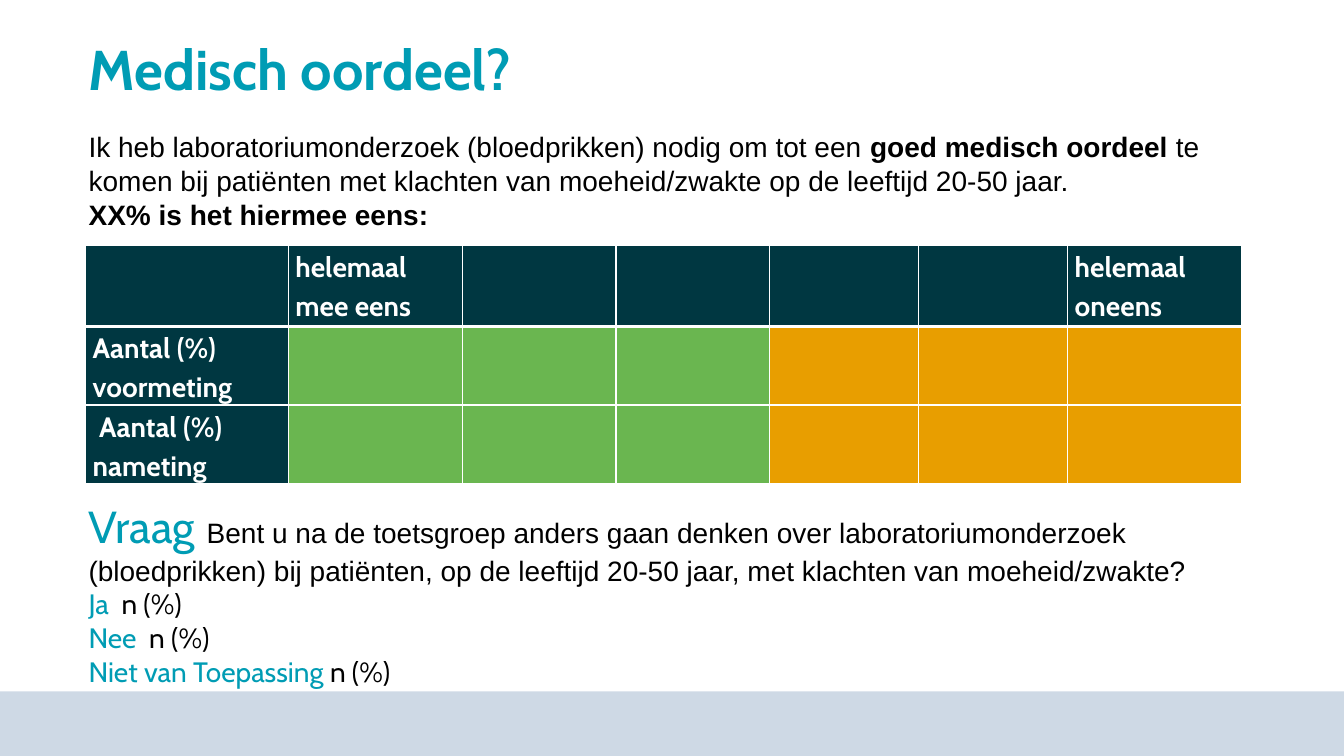
from dataclasses import dataclass

from lxml.etree import SubElement
from pptx import Presentation
from pptx.dml.color import RGBColor as Rgb
from pptx.enum.shapes import MSO_SHAPE as Preset
from pptx.enum.text import MSO_ANCHOR as Anchor, PP_ALIGN as Align
from pptx.oxml.ns import qn
from pptx.util import Inches, Pt


@dataclass(frozen=True)
class Theme:
    teal: str = "009CB4"
    navy: str = "003741"
    agree: str = "6AB650"
    disagree: str = "E89E00"
    band: str = "CED9E5"
    white: str = "FFFFFF"
    black: str = "000000"
    display: str = "Cabin"
    body: str = "Arial"
    title_size: int = 40
    lead_size: int = 32
    gap_size: int = 36
    text_size: int = 20


@dataclass
class SlideBuilder:
    theme: Theme
    slide: object

    def style(self, run, color, face, size=None, bold=False):
        font = run.font
        font.name = face
        font.size = Pt(size or self.theme.text_size)
        font.bold = bold
        font.color.rgb = Rgb.from_string(color)

    def place(self, left, top, width, height):
        return [Inches(length) for length in (left, top, width, height)]

    def title(self, text, box):
        heading = self.slide.shapes.title
        heading.left, heading.top, heading.width, heading.height = self.place(*box)
        frame = heading.text_frame
        frame.text = text
        frame.vertical_anchor = Anchor.MIDDLE
        line = frame.paragraphs[0]
        line.alignment = Align.LEFT
        line.line_spacing = 0.9
        self.style(line.runs[0], self.theme.teal, self.theme.display,
                   self.theme.title_size, True)

    def band(self, box):
        footer = self.slide.shapes.add_shape(Preset.RECTANGLE, *self.place(*box))
        footer.shadow.inherit = False
        footer.fill.solid()
        footer.fill.fore_color.rgb = Rgb.from_string(self.theme.band)
        footer.line.fill.background()

    def text(self, paragraphs, box):
        frame = self.slide.shapes.add_textbox(*self.place(*box)).text_frame
        frame.word_wrap = True
        for index, pieces in enumerate(paragraphs):
            line = frame.add_paragraph() if index else frame.paragraphs[0]
            for words, *look in pieces:
                run = line.add_run()
                run.text = words
                self.style(run, *look)

    def border(self, cell, widths):
        properties = cell._tc.get_or_add_tcPr()
        for side, width in zip("LRTB", widths):
            edge = SubElement(properties, qn(f"a:ln{side}"), w=str(Pt(width)))
            fill = SubElement(edge, qn("a:solidFill"))
            SubElement(fill, qn("a:srgbClr"), val=self.theme.white)

    def cell(self, cell, text, fill, widths):
        self.border(cell, widths)
        cell.fill.solid()
        cell.fill.fore_color.rgb = Rgb.from_string(fill)
        if text:
            cell.margin_left = cell.margin_right = Inches(0.07)
            cell.margin_top = cell.margin_bottom = 0
            cell.text = text
            line = cell.text_frame.paragraphs[0]
            line.line_spacing = 1.15
            self.style(line.runs[0], self.theme.white, self.theme.display, bold=True)

    def table(self, rows, fills, left, top, widths, heights):
        box = self.place(left, top, sum(widths), sum(heights))
        grid = self.slide.shapes.add_table(len(rows), len(widths), *box).table
        grid.horz_banding = False
        for column, width in zip(grid.columns, widths):
            column.width = Inches(width)
        for row, height in zip(grid.rows, heights):
            row.height = Inches(height)
        for r, (texts, colors) in enumerate(zip(rows, fills)):
            edges = (1, 1, 3 if r == 1 else 1, 3 if r == 0 else 1)
            for c, (words, color) in enumerate(zip(texts, colors)):
                self.cell(grid.cell(r, c), words, color, edges)


def main():
    deck = Presentation()
    deck.slide_width, deck.slide_height = Inches(13.33), Inches(7.5)
    theme = Theme()
    page = SlideBuilder(theme, deck.slides.add_slide(deck.slide_layouts[5]))

    plain = (theme.black, theme.body)
    strong = (*plain, theme.text_size, True)
    accent = (theme.teal, theme.display)
    count = (theme.black, theme.display)

    page.band((0, 6.86, 13.33, 0.64))
    page.title("Medisch oordeel?", (0.78, 0.36, 10.68, 0.71))

    scores = [theme.navy] + [theme.agree] * 3 + [theme.disagree] * 3
    blanks = [""] * 6
    page.table(
        [["", "helemaal mee eens", "", "", "", "", "helemaal oneens"],
         ["Aantal (%) voormeting", *blanks],
         [" Aantal (%) nameting", *blanks]],
        [[theme.navy] * 7, scores, scores],
        0.85, 2.43,
        [2.01, 1.73, 1.52, 1.52, 1.48, 1.48, 1.73],
        [0.81, 0.76, 0.76])

    page.text(
        [[("Ik heb laboratoriumonderzoek (bloedprikken) nodig om tot een ", *plain),
          ("goed medisch oordeel ", *strong),
          ("te komen bij patiënten met klachten van moeheid/zwakte "
           "op de leeftijd 20-50 jaar.", *plain)],
         [("XX% is het hiermee eens:", *strong)]],
        (0.78, 1.24, 11.61, 1.41))

    answers = [[(f"{answer} ", *accent), (f"{gap}n (%)", *count)]
               for answer, gap in (("Ja", " "), ("Nee", " "), ("Niet van Toepassing", ""))]
    page.text(
        [[("Vraag", *accent, theme.lead_size),
          (" ", *accent, theme.gap_size),
          ("Bent u na de toetsgroep anders gaan denken over laboratoriumonderzoek "
           "(bloedprikken) bij patiënten, op de leeftijd 20-50 jaar, "
           "met klachten van moeheid/zwakte?", *plain)],
         *answers],
        (0.78, 4.84, 11.47, 2.05))

    deck.save("out.pptx")


if __name__ == "__main__":
    main()
